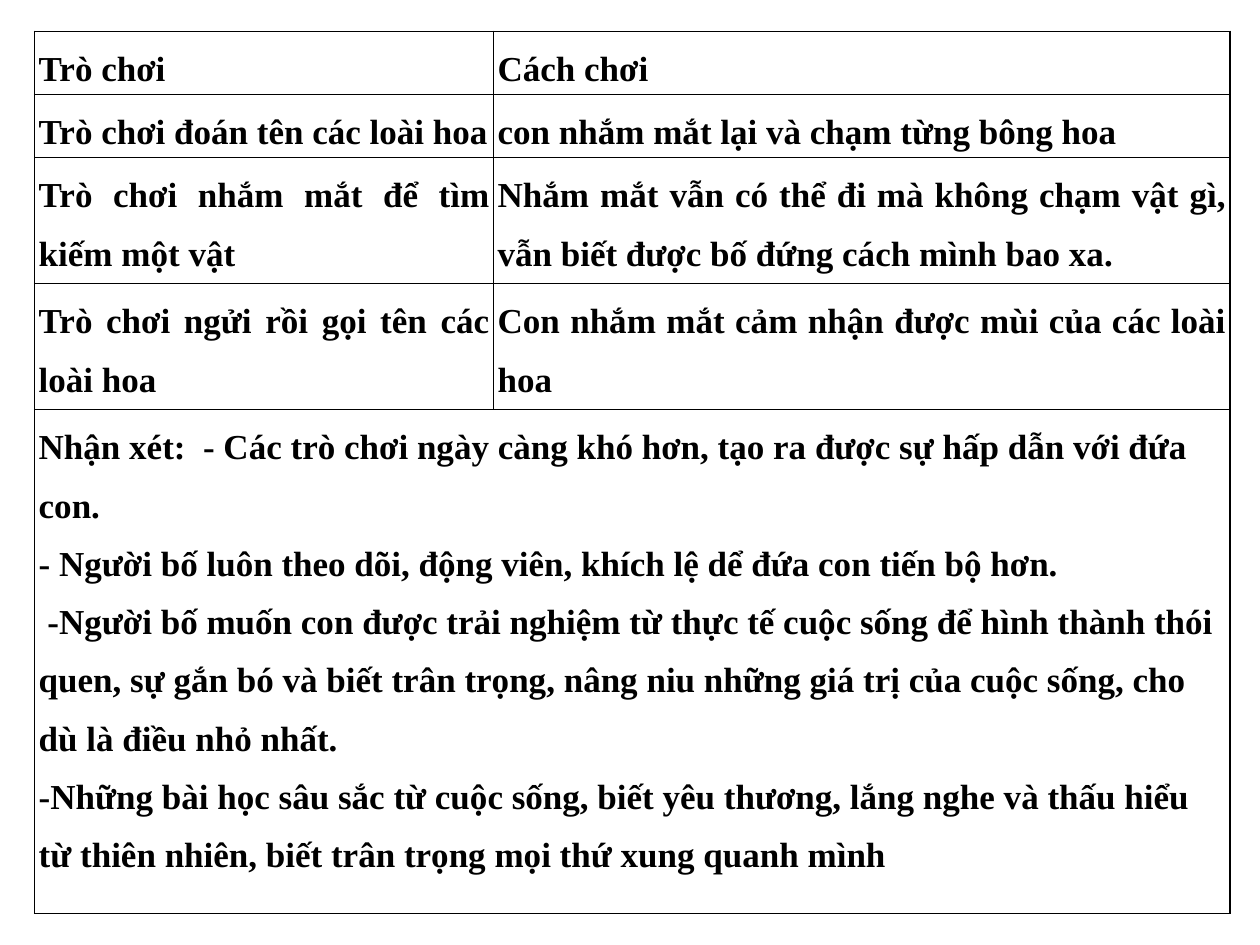
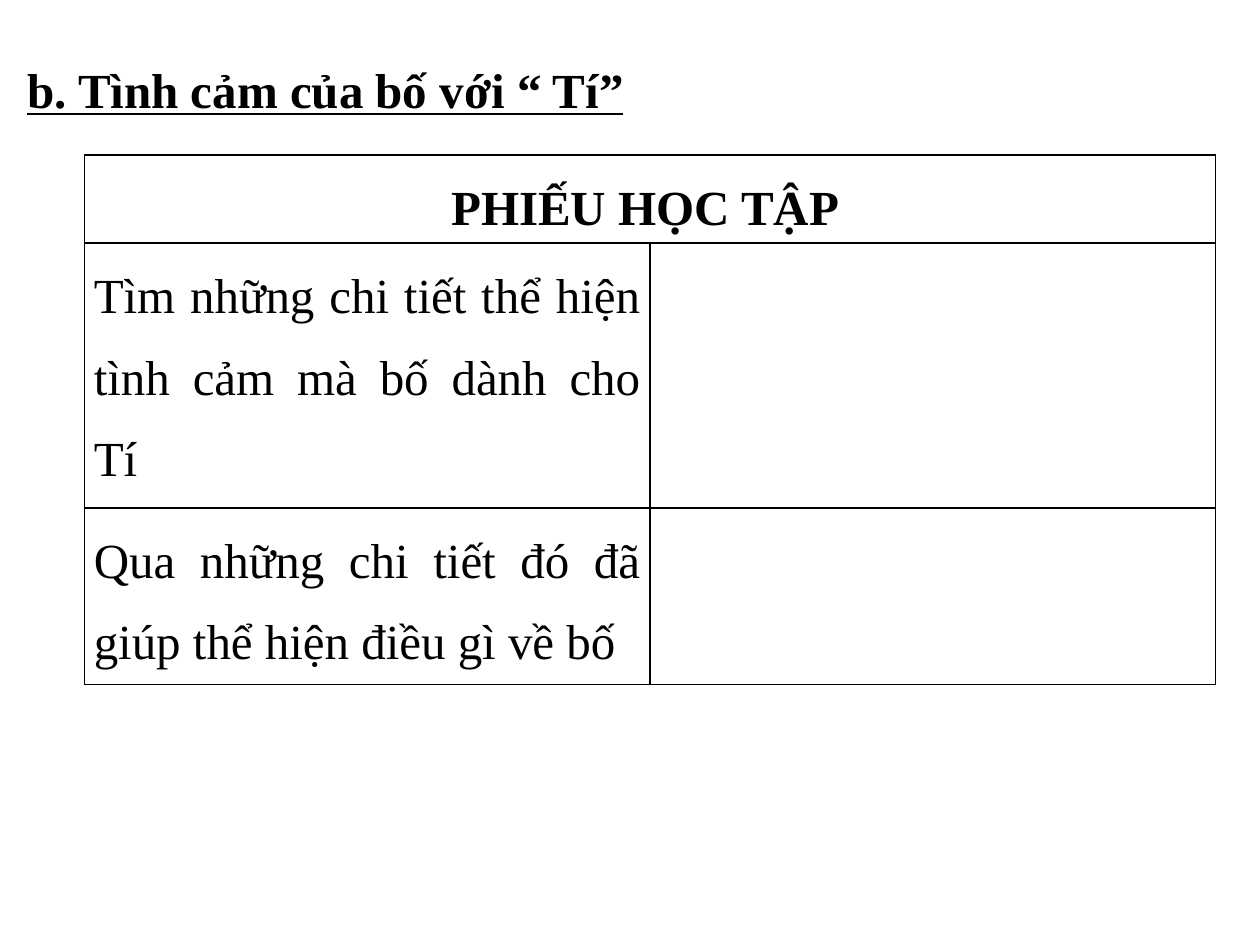
from dataclasses import dataclass

from lxml import etree
from pptx import Presentation
from pptx import util as u
from pptx.dml.color import RGBColor
from pptx.enum import text
from pptx.oxml import ns

FONT = "Times New Roman"
INK = "000000"
LEFT, CENTER, JUSTIFY = text.PP_ALIGN.LEFT, text.PP_ALIGN.CENTER, text.PP_ALIGN.JUSTIFY


@dataclass
class CellText:
    words: str
    bold: bool = True
    align: text.PP_ALIGN = JUSTIFY
    full_width: bool = False


@dataclass
class Grid:
    left: float
    top: float
    cols: list[float]
    rows: list[float]
    margin: float
    size: int
    cells: list[list[CellText]]


def color(hex_color: str) -> RGBColor:
    return RGBColor.from_string(hex_color)


def style_run(r, size: int, bold: bool, underline: bool = False) -> None:
    r.font.name = FONT
    r.font.size = u.Pt(size)
    r.font.bold = bold
    if underline:
        r.font.underline = True
    r.font.color.rgb = color(INK)


def add_borders(cell) -> None:
    """Rule all four sides; border lines must precede the cell fill."""
    tc_pr = cell._tc.get_or_add_tcPr()
    for i, side in enumerate(("lnL", "lnR", "lnT", "lnB")):
        ln = etree.Element(ns.qn(f"a:{side}"), w=str(u.Pt(1)))
        fill = etree.SubElement(ln, ns.qn("a:solidFill"))
        etree.SubElement(fill, ns.qn("a:srgbClr"), val=INK)
        tc_pr.insert(i, ln)


def fill_cell(cell, content: CellText, size: int) -> None:
    cell.text_frame.text = content.words
    for p in cell.text_frame.paragraphs:
        p.alignment = content.align
        p.line_spacing = 1.5
        for r in p.runs:
            style_run(r, size, content.bold)


def add_grid(s, grid: Grid) -> None:
    table = s.shapes.add_table(
        len(grid.rows), len(grid.cols), u.Cm(grid.left), u.Cm(grid.top),
        u.Cm(sum(grid.cols)), u.Cm(sum(grid.rows))).table
    table.first_row = table.horz_banding = False
    for col, width in zip(table.columns, grid.cols):
        col.width = u.Cm(width)
    for row, height in zip(table.rows, grid.rows):
        row.height = u.Cm(height)

    for cell in table.iter_cells():
        cell.fill.background()
        cell.margin_left = cell.margin_right = u.Cm(grid.margin)
        cell.margin_top = cell.margin_bottom = 0
        add_borders(cell)

    for i, contents in enumerate(grid.cells):
        for j, content in enumerate(contents):
            cell = table.cell(i, j)
            if content.full_width:
                cell.merge(table.cell(i, len(grid.cols) - 1))
            fill_cell(cell, content, grid.size)


def add_heading(s, words: str) -> None:
    tf = s.shapes.add_textbox(u.Cm(0.3), u.Cm(-0.13), u.Cm(15.4), u.Cm(2.64)).text_frame
    tf.word_wrap = True
    tf.vertical_anchor = text.MSO_ANCHOR.BOTTOM
    tf.text = words
    style_run(tf.paragraphs[0].runs[0], 28, bold=True, underline=True)


# Games, how to play them, and remarks
REMARKS = "\n".join([
    "Nhận xét:  - Các trò chơi ngày càng khó hơn, tạo ra được sự hấp dẫn với đứa con.",
    "- Người bố luôn theo dõi, động viên, khích lệ dể đứa con tiến bộ hơn.",
    " -Người bố muốn con được trải nghiệm từ thực tế cuộc sống để hình thành thói quen, "
    "sự gắn bó và biết trân trọng, nâng niu những giá trị của cuộc sống, "
    "cho dù là điều nhỏ nhất.",
    "-Những bài học sâu sắc từ cuộc sống, biết yêu thương, lắng nghe và thấu hiểu "
    "từ thiên nhiên, biết trân trọng mọi thứ xung quanh mình",
])
GAMES = Grid(
    left=0.7, top=0.63, cols=[9.25, 14.85], rows=[1.27, 1.27, 2.54, 2.54, 10.16],
    margin=0.08, size=20,
    cells=[
        [CellText("Trò chơi"), CellText("Cách chơi")],
        [CellText("Trò chơi đoán tên các loài hoa"),
         CellText("con nhắm mắt lại và chạm từng bông hoa")],
        [CellText("Trò chơi nhắm mắt để tìm kiếm một vật"),
         CellText("Nhắm mắt vẫn có thể đi mà không chạm vật gì, "
                  "vẫn biết được bố đứng cách mình bao xa.")],
        [CellText("Trò chơi ngửi rồi gọi tên các loài hoa"),
         CellText("Con nhắm mắt cảm nhận được mùi của các loài hoa")],
        [CellText(REMARKS, align=LEFT, full_width=True)],
    ])

# Worksheet with blank answer column
WORKSHEET = Grid(
    left=1.7, top=3.12, cols=[11.4, 11.4], rows=[1.78, 5.33, 3.56],
    margin=0.19, size=28,
    cells=[
        [CellText("PHIẾU HỌC TẬP ", align=CENTER, full_width=True)],
        [CellText("Tìm những chi tiết thể hiện tình cảm mà bố dành cho Tí", bold=False)],
        [CellText("Qua những chi tiết đó đã giúp thể hiện điều gì về bố", bold=False)],
    ])


def main() -> None:
    prs = Presentation()
    prs.slide_width, prs.slide_height = u.Cm(25.4), u.Cm(19.05)
    blank = prs.slide_layouts[6]

    add_grid(prs.slides.add_slide(blank), GAMES)

    s = prs.slides.add_slide(blank)
    add_heading(s, "b. Tình cảm của bố với “ Tí”")
    add_grid(s, WORKSHEET)

    prs.save("out.pptx")


if __name__ == "__main__":
    main()
